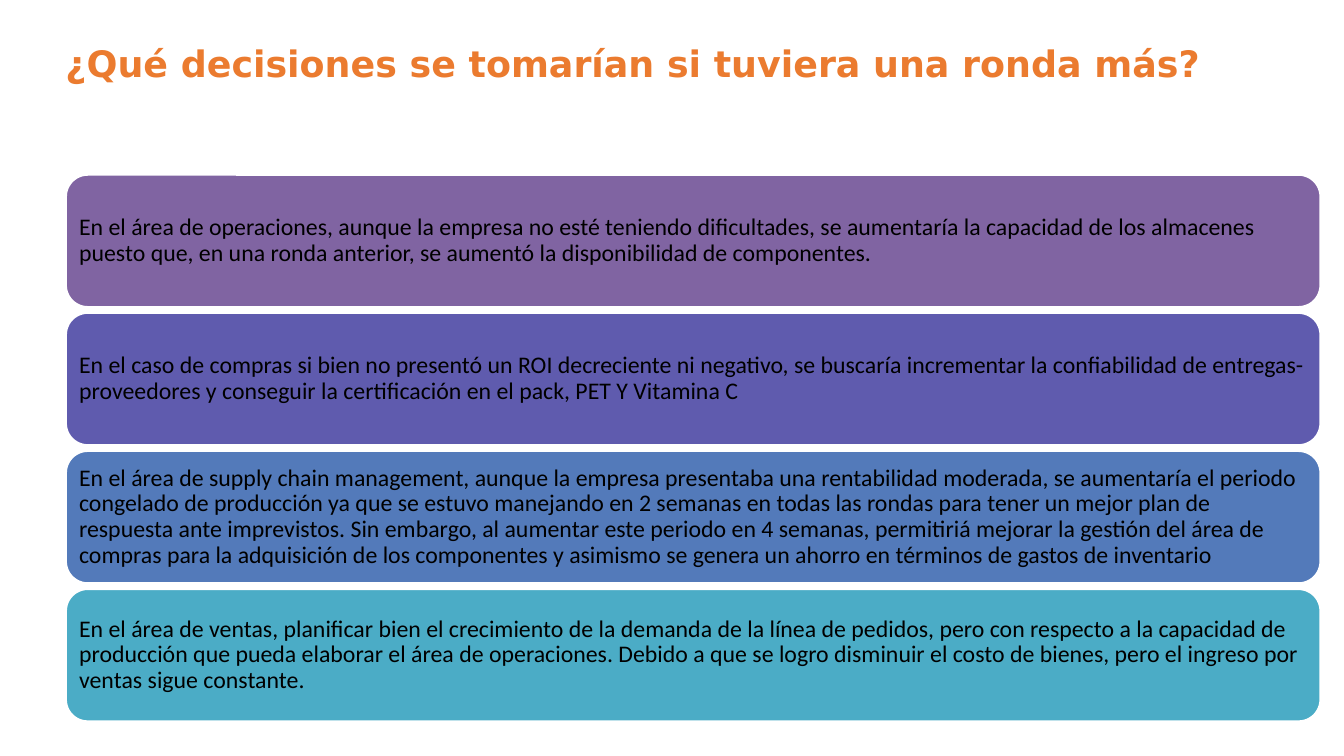
import dataclasses

import pptx
import pptx.dml.color
import pptx.enum.shapes
import pptx.enum.text
import pptx.shapes.autoshape
import pptx.util

EMU_PER_PX = 9144  # 100 px to the inch

WHITE = pptx.dml.color.RGBColor(0xFF, 0xFF, 0xFF)
BLACK = pptx.dml.color.RGBColor(0x00, 0x00, 0x00)
ORANGE = pptx.dml.color.RGBColor(0xEB, 0x7B, 0x2F)
PURPLE = pptx.dml.color.RGBColor(0x80, 0x64, 0xA2)
INDIGO = pptx.dml.color.RGBColor(0x5F, 0x5B, 0xAE)
BLUE = pptx.dml.color.RGBColor(0x53, 0x7A, 0xBA)
TEAL = pptx.dml.color.RGBColor(0x4B, 0xAC, 0xC6)

LEFT = 65
CARD_TOP, CARD_WIDTH, CARD_HEIGHT, CARD_STEP = 173, 1245, 132, 137


@dataclasses.dataclass(frozen=True)
class Decision:
    fill: pptx.dml.color.RGBColor
    text: str


DECISIONS = [
    Decision(PURPLE, "En el área de operaciones, aunque la empresa no esté teniendo "
             "dificultades, se aumentaría la capacidad de los almacenes puesto que, "
             "en una ronda anterior, se aumentó la disponibilidad de componentes."),
    Decision(INDIGO, "En el caso de compras si bien no presentó un ROI decreciente ni "
             "negativo, se buscaría incrementar la confiabilidad de "
             "entregas-proveedores y conseguir la certificación en el pack, "
             "PET Y Vitamina C"),
    Decision(BLUE, "En el área de supply chain management, aunque la empresa "
             "presentaba una rentabilidad moderada, se aumentaría el periodo "
             "congelado de producción ya que se estuvo manejando en 2 semanas en "
             "todas las rondas para tener un mejor plan de respuesta ante "
             "imprevistos. Sin embargo, al aumentar este periodo en 4 semanas, "
             "permitiriá mejorar la gestión del área de compras para la "
             "adquisición de los componentes y asimismo se genera un ahorro en "
             "términos de gastos de inventario"),
    Decision(TEAL, "En el área de ventas, planificar bien el crecimiento de la demanda "
             "de la línea de pedidos, pero con respecto a la capacidad de producción "
             "que pueda elaborar el área de operaciones. Debido a que se logro "
             "disminuir el costo de bienes, pero el ingreso por ventas sigue "
             "constante."),
]


def px(length: int) -> pptx.util.Emu:
    return pptx.util.Emu(length * EMU_PER_PX)


def write(shape: pptx.shapes.autoshape.Shape, text: str, *, font: str, size: int,
          color: pptx.dml.color.RGBColor, bold: bool = False, inset: int = 0,
          anchor: pptx.enum.text.MSO_ANCHOR = pptx.enum.text.MSO_ANCHOR.TOP,
          line_spacing: float = 1.0) -> None:
    frame = shape.text_frame
    frame.word_wrap = True
    frame.vertical_anchor = anchor
    frame.margin_left = frame.margin_right = px(inset)
    frame.margin_top = frame.margin_bottom = px(inset)
    paragraph = frame.paragraphs[0]
    paragraph.alignment = pptx.enum.text.PP_ALIGN.LEFT
    paragraph.line_spacing = line_spacing
    run = paragraph.add_run()
    run.text = text
    run.font.name = font
    run.font.size = pptx.util.Pt(size)
    run.font.bold = bold
    run.font.color.rgb = color


def draw_decision(slide: pptx.slide.Slide, decision: Decision, top: int) -> None:
    card = slide.shapes.add_shape(
        pptx.enum.shapes.MSO_SHAPE.ROUNDED_RECTANGLE,
        px(LEFT), px(top), px(CARD_WIDTH), px(CARD_HEIGHT))
    card.shadow.inherit = False
    card.fill.solid()
    card.fill.fore_color.rgb = decision.fill
    card.line.color.rgb = WHITE
    card.line.width = pptx.util.Pt(2)
    write(card, decision.text, font="Calibri", size=17, color=BLACK, inset=7,
          anchor=pptx.enum.text.MSO_ANCHOR.MIDDLE, line_spacing=0.9)


def main() -> None:
    deck = pptx.Presentation()
    deck.slide_width, deck.slide_height = px(1333), px(750)
    slide = deck.slides.add_slide(deck.slide_layouts[6])

    # Heading
    heading = slide.shapes.add_textbox(px(LEFT), px(41), px(1204), px(44))
    write(heading, "¿Qué decisiones se tomarían si tuviera una ronda más?",
          font="DejaVu Sans", size=26, color=ORANGE, bold=True)

    # One card per decision
    for row, decision in enumerate(DECISIONS):
        draw_decision(slide, decision, CARD_TOP + row * CARD_STEP)

    deck.save("out.pptx")


if __name__ == "__main__":
    main()
